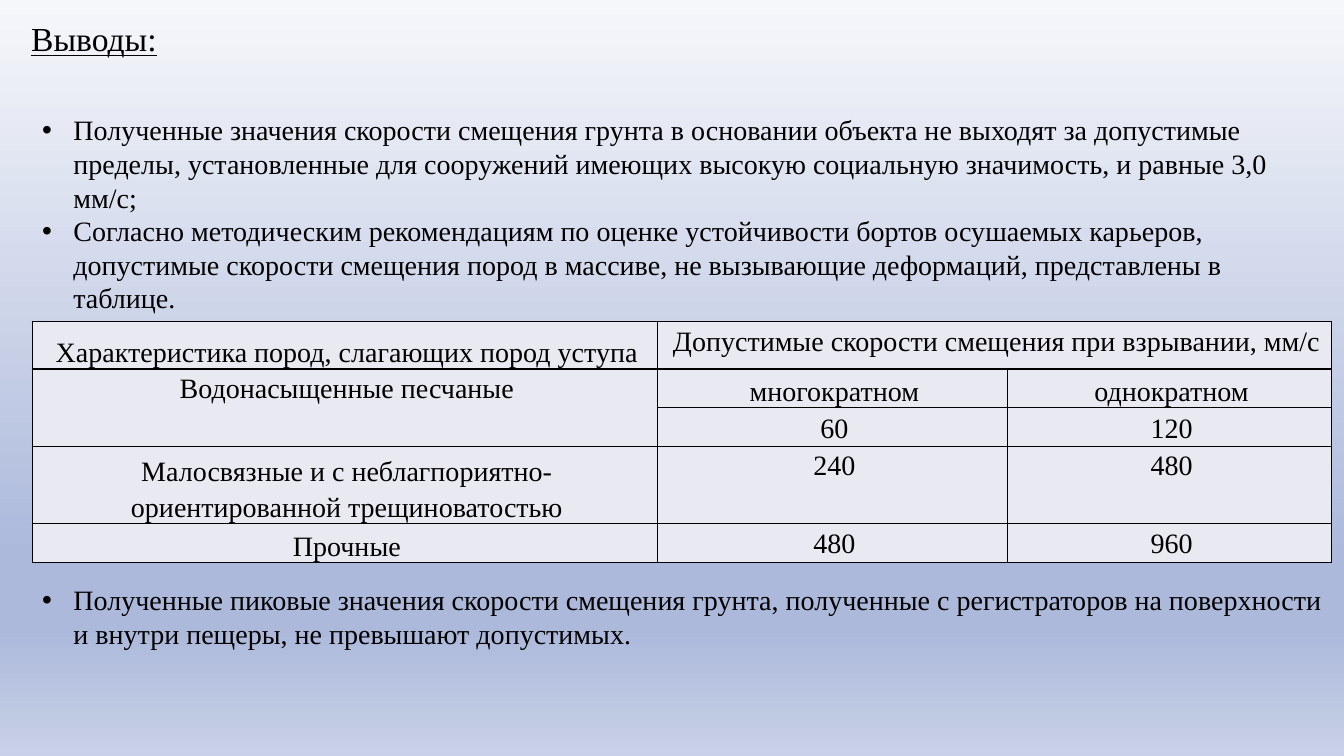
from dataclasses import dataclass

from lxml.etree import SubElement
from pptx import Presentation
from pptx.dml.color import RGBColor
from pptx.enum.text import MSO_ANCHOR as Anchor, MSO_AUTO_SIZE as AutoSize, PP_ALIGN as Align
from pptx.oxml.ns import qn
from pptx.util import Inches, Pt

TITLE = "Выводы:"
FINDINGS = [
    "Полученные значения скорости смещения грунта в основании объекта не выходят за допустимые "
    "пределы, установленные для сооружений имеющих высокую социальную значимость, и равные 3,0 мм/с;",
    "Согласно методическим рекомендациям по оценке устойчивости бортов осушаемых карьеров, "
    "допустимые скорости смещения пород в массиве, не вызывающие деформаций, представлены в таблице.",
    "Полученные пиковые значения скорости смещения грунта, полученные с регистраторов на "
    "поверхности и внутри пещеры, не превышают допустимых.",
]
TOP, MIDDLE, BOTTOM = Anchor.TOP, Anchor.MIDDLE, Anchor.BOTTOM
# Each cell is (text, anchor); None is covered by a merged neighbour.
LIMITS = [
    [("Характеристика пород, слагающих пород уступа", BOTTOM),
     ("Допустимые скорости смещения при взрывании, мм/с", TOP), None],
    [("Водонасыщенные песчаные", TOP), ("многократном", BOTTOM), ("однократном", BOTTOM)],
    [None, ("60", MIDDLE), ("120", MIDDLE)],
    [("Малосвязные и с неблагпориятно-ориентированной трещиноватостью", BOTTOM),
     ("240", TOP), ("480", TOP)],
    [("Прочные", BOTTOM), ("480", TOP), ("960", TOP)],
]
MERGES = [((0, 1), (0, 2)), ((1, 0), (2, 0))]
COLUMNS = [6.2, 3.47, 3.22]
ROWS = [0.47, 0.29, 0.26, 0.47, 0.27]
LEFT, WIDTH = 0.32, 12.9
TABLE_GAP = 191.5  # points left between the findings for the table


@dataclass(frozen=True)
class Theme:
    font: str = "Times New Roman"
    ink: str = "000000"
    cell: str = "E9EAF1"
    title_size: int = 24
    text_size: int = 20
    border: int = 1
    backdrop: tuple = ((0, "F6F7FB"), (74, "ACB9DB"), (83, "ACB9DB"), (100, "C8D1E7"))


THEME = Theme()


def apply(target, values):
    for name, value in values.items():
        setattr(target, name, value)


def write(para, text, size, underline=None):
    span = para.add_run()
    span.text = text
    apply(span.font, dict(name=THEME.font, size=Pt(size), underline=underline))
    span.font.color.rgb = RGBColor.from_string(THEME.ink)


def add_color(parent, color):
    SubElement(parent, qn("a:srgbClr")).set("val", color)


def paint_backdrop(page):
    fill = page.background.fill
    fill.gradient()
    fill.gradient_angle = 270
    gradient = page.background._cSld.find(".//" + qn("a:gradFill"))
    stops = gradient.find(qn("a:gsLst"))
    for stop in list(stops):
        stops.remove(stop)
    for share, color in THEME.backdrop:
        stop = SubElement(stops, qn("a:gs"))
        stop.set("pos", str(share * 1000))
        add_color(stop, color)


def add_title(page):
    title = page.shapes.title
    apply(title, dict(left=Inches(0.21), top=Inches(0.13), width=Inches(6.67), height=Inches(0.5)))
    apply(title.text_frame, dict(word_wrap=True, vertical_anchor=TOP, auto_size=AutoSize.NONE))
    para = title.text_frame.paragraphs[0]
    para.alignment = Align.LEFT
    write(para, TITLE, THEME.title_size, underline=True)


def add_findings(page):
    box = page.shapes.add_textbox(Inches(LEFT), Inches(1.07), Inches(WIDTH), Inches(5.82))
    frame = box.text_frame
    frame.word_wrap = True
    for index, text in enumerate(FINDINGS):
        para = frame.add_paragraph() if index else frame.paragraphs[0]
        if index == len(FINDINGS) - 1:
            para.space_before = Pt(TABLE_GAP)
        props = para._p.get_or_add_pPr()
        props.set("marL", str(Inches(0.31)))
        props.set("indent", str(-Inches(0.31)))
        SubElement(props, qn("a:buFont")).set("typeface", "Arial")
        SubElement(props, qn("a:buChar")).set("char", "•")
        write(para, text, THEME.text_size)


def outline(cell):
    props = cell._tc.get_or_add_tcPr()
    for place, side in enumerate("LRTB"):
        line = props.makeelement(qn(f"a:ln{side}"), {"w": str(Pt(THEME.border))})
        add_color(SubElement(line, qn("a:solidFill")), THEME.ink)
        props.insert(place, line)


def fill_cell(cell, text, anchor):
    apply(cell, dict(vertical_anchor=anchor))
    para = cell.text_frame.paragraphs[0]
    apply(para, dict(alignment=Align.CENTER, line_spacing=1.15, space_after=Pt(10)))
    para._p.get_or_add_pPr().set("marL", str(Inches(0.04)))
    write(para, text, THEME.text_size)


def add_limits(page):
    table = page.shapes.add_table(len(ROWS), len(COLUMNS), Inches(LEFT), Inches(3.19),
                                  Inches(WIDTH), Inches(sum(ROWS))).table
    apply(table, dict(first_row=False, horz_banding=False))
    for column, width in zip(table.columns, COLUMNS):
        column.width = Inches(width)
    for row, height in zip(table.rows, ROWS):
        row.height = Inches(height)
    for start, end in MERGES:
        table.cell(*start).merge(table.cell(*end))
    for row, entries in zip(table.rows, LIMITS):
        for cell, entry in zip(row.cells, entries):
            apply(cell, dict(margin_left=0, margin_right=0, margin_top=0, margin_bottom=0))
            cell.fill.solid()
            cell.fill.fore_color.rgb = RGBColor.from_string(THEME.cell)
            outline(cell)
            if entry:
                fill_cell(cell, *entry)
            else:
                cell.text_frame.paragraphs[0].font.size = Pt(THEME.text_size)


def main():
    deck = Presentation()
    apply(deck, dict(slide_width=Inches(13.33), slide_height=Inches(7.5)))
    page = deck.slides.add_slide(deck.slide_layouts[5])
    paint_backdrop(page)
    add_title(page)
    add_findings(page)
    add_limits(page)
    deck.save("out.pptx")


if __name__ == "__main__":
    main()
